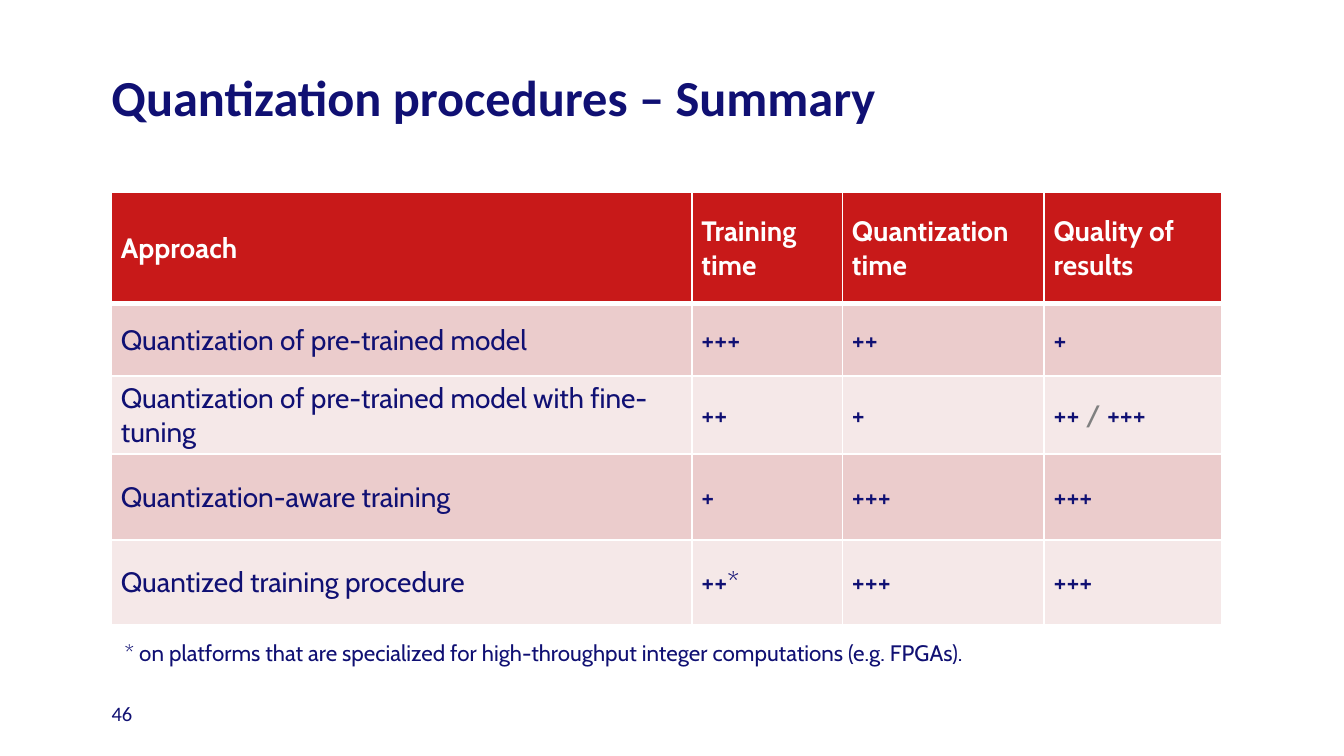
from lxml import etree
from pptx import Presentation
from pptx.dml.color import RGBColor
from pptx.enum.shapes import MSO_SHAPE
from pptx.enum.text import MSO_ANCHOR, PP_ALIGN
from pptx.oxml.ns import qn
from pptx.util import Inches, Pt

RECTANGLE = MSO_SHAPE.RECTANGLE
MIDDLE = MSO_ANCHOR.MIDDLE
LEFT = PP_ALIGN.LEFT

NAVY, RED, WHITE, GRAY = "101073", "C81919", "FFFFFF", "808080"
BAND_FILLS = ("EBCCCC", "F5E8E8")
MARGIN, CONTENT_WIDTH = 0.83, 8.26
COLUMN_WIDTHS = (4.32, 1.12, 1.5, 1.32)
ROW_HEIGHTS = (0.83, 0.54, 0.58, 0.64, 0.63)
RATINGS = (
    ("Approach", "Training time", "Quantization time", "Quality of results"),
    ("Quantization of pre-trained model", "+++", "++", "+"),
    ("Quantization of pre-trained model with fine-tuning", "++", "+", "++ / +++"),
    ("Quantization-aware training", "+", "+++", "+++"),
    ("Quantized training procedure", "++*", "+++", "+++"),
)


def rgb(color):
    """Turn a hex string into a colour."""
    return RGBColor.from_string(color)


def format_run(run, size, font, color, bold=False):
    """Set the look of one run."""
    run.font.size = Pt(size)
    run.font.name = font
    run.font.bold = bold
    run.font.color.rgb = rgb(color)


def set_insets(target, left, top, right, bottom):
    """Set the inner margins of a text frame or a cell."""
    target.margin_left, target.margin_right = Inches(left), Inches(right)
    target.margin_top, target.margin_bottom = Inches(top), Inches(bottom)


def add_text(slide, top, height, text, size, font, bold=False):
    """Add a one-paragraph text box across the content width."""
    box = slide.shapes.add_textbox(
        Inches(MARGIN), Inches(top), Inches(CONTENT_WIDTH), Inches(height))
    frame = box.text_frame
    frame.word_wrap = True
    frame.text = text
    format_run(frame.paragraphs[0].runs[0], size, font, NAVY, bold)
    return frame


def add_page_number(slide, number):
    """Add the white corner block with the page number."""
    block = slide.shapes.add_shape(
        RECTANGLE, Inches(0), Inches(5), Inches(1.22), Inches(0.62))
    block.shadow.inherit = False
    block.fill.solid()
    block.fill.fore_color.rgb = rgb(WHITE)
    block.line.fill.background()
    frame = block.text_frame
    set_insets(frame, MARGIN, 0, 0, 0)
    frame.vertical_anchor = MIDDLE
    frame.text = number
    frame.paragraphs[0].alignment = LEFT
    format_run(frame.paragraphs[0].runs[0], 11, "Calibri", NAVY)


def add_borders(cell, top, bottom):
    """Draw white borders around a cell, with top and bottom widths in points."""
    properties = cell._tc.get_or_add_tcPr()
    widths = (("a:lnL", 1), ("a:lnR", 1), ("a:lnT", top), ("a:lnB", bottom))
    for position, (tag, width) in enumerate(widths):
        border = etree.Element(qn(tag), w=str(Pt(width)))
        fill = etree.SubElement(border, qn("a:solidFill"))
        etree.SubElement(fill, qn("a:srgbClr"), val=WHITE)
        properties.insert(position, border)


def fill_cell(cell, text, row):
    """Write and style one cell according to its row."""
    header = row == 0
    set_insets(cell, 0.07, 0.04, 0.07, 0.04)
    cell.vertical_anchor = MIDDLE
    cell.fill.solid()
    cell.fill.fore_color.rgb = rgb(RED if header else BAND_FILLS[(row - 1) % 2])
    add_borders(cell, 3 if row == 1 else 1, 3 if header else 1)
    paragraph = cell.text_frame.paragraphs[0]
    before, slash, after = text.partition(" / ")
    for part in filter(None, (before, slash, after)):
        run = paragraph.add_run()
        run.text = part
        color = WHITE if header else GRAY if part == slash else NAVY
        format_run(run, 15, "Cabin", color, header)


def add_ratings_table(slide):
    """Add the table that rates the quantization approaches."""
    table = slide.shapes.add_table(
        len(ROW_HEIGHTS), len(COLUMN_WIDTHS), Inches(MARGIN), Inches(1.43),
        Inches(CONTENT_WIDTH), Inches(sum(ROW_HEIGHTS))).table
    for column, width in zip(table.columns, COLUMN_WIDTHS):
        column.width = Inches(width)
    for row, height in zip(table.rows, ROW_HEIGHTS):
        row.height = Inches(height)
    for row, texts in enumerate(RATINGS):
        for column, text in enumerate(texts):
            fill_cell(table.cell(row, column), text, row)


def main():
    """Build the summary slide and save it."""
    presentation = Presentation()
    presentation.slide_width = Inches(10)
    presentation.slide_height = Inches(10 * 9 / 16)
    slide = presentation.slides.add_slide(presentation.slide_layouts[6])
    title = add_text(slide, 0.57, 0.59, "Quantization procedures – Summary",
                     27, "Calibri", bold=True)
    set_insets(title, 0, 0, 0, 0)
    title.paragraphs[0].line_spacing = Pt(27)
    add_ratings_table(slide)
    add_page_number(slide, "46")
    add_text(slide, 4.71, 0.3,
             "* on platforms that are specialized for high-throughput "
             "integer computations (e.g. FPGAs).", 12, "Cabin")
    presentation.save("out.pptx")


if __name__ == "__main__":
    main()
